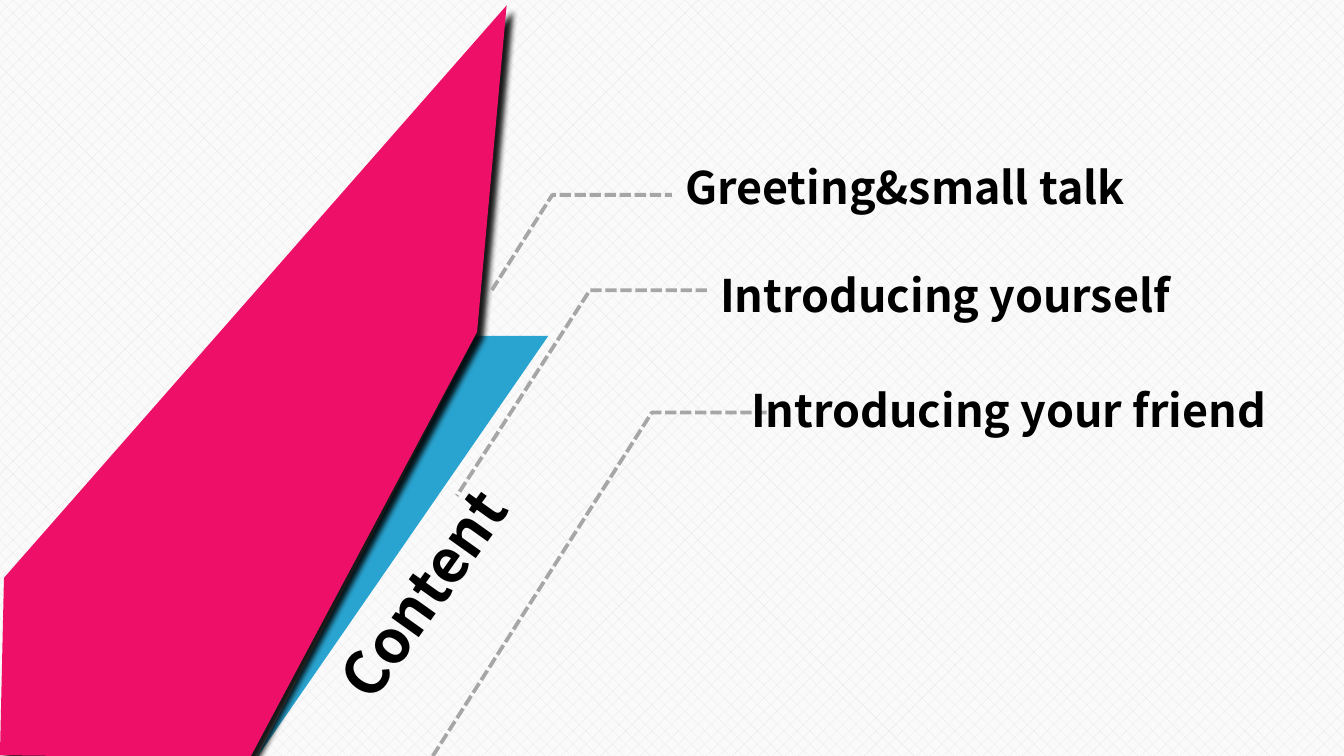
from dataclasses import dataclass

from lxml.etree import SubElement
from pptx import Presentation
from pptx.dml.color import RGBColor
from pptx.enum.dml import MSO_LINE, MSO_PATTERN
from pptx.enum.text import MSO_AUTO_SIZE, PP_ALIGN
from pptx.oxml.ns import qn
from pptx.shapes.autoshape import Shape
from pptx.slide import Slide
from pptx.util import Inches, Pt

FONT = "Noto Sans CJK SC"
Point = tuple[float, float]


@dataclass(frozen=True)
class Topic:
    """A heading and the dashed leader that points to it."""

    text: str
    left: float
    top: float
    width: float
    leader: tuple[Point, ...]


TOPICS = (
    Topic("Greeting&small talk", 5, 1.14, 3.93, ((3.66, 2.16), (4.11, 1.45), (5, 1.45))),
    Topic("Introducing yourself", 5.26, 1.94, 3.97, ((5.26, 2.16), (4.39, 2.16), (3.4, 3.69))),
    Topic("Introducing your friend", 5.49, 2.8, 4.41, ((3.16, 5.72), (4.85, 3.07), (5.74, 3.07))),
)
BLUE_FOLD = ((4.08, 2.5), (1.91, 5.64), (3.54, 2.5))
PINK_RIBBON = ((0, 5.62), (1.86, 5.64), (3.55, 2.47), (3.77, 0.04), (0.03, 4.3))


def color(value: str) -> RGBColor:
    """Turn a hex string into a colour."""
    return RGBColor.from_string(value)


def add_outline(slide: Slide, points: tuple[Point, ...], close: bool) -> Shape:
    """Draw a freeform through points given in inches."""
    corners = [(Inches(x), Inches(y)) for x, y in points]
    builder = slide.shapes.build_freeform(*corners[0])
    builder.add_line_segments(corners[1:], close=close)
    shape = builder.convert_to_shape()
    shape.shadow.inherit = False
    return shape


def add_panel(slide: Slide, points: tuple[Point, ...], fill: str) -> Shape:
    """Draw a closed filled panel without a border."""
    shape = add_outline(slide, points, close=True)
    shape.fill.solid()
    shape.fill.fore_color.rgb = color(fill)
    shape.line.fill.background()
    return shape


def add_leader(slide: Slide, points: tuple[Point, ...]) -> None:
    """Draw an open dashed grey leader."""
    shape = add_outline(slide, points, close=False)
    shape.fill.background()
    shape.line.color.rgb = color("A6A6A6")
    shape.line.width = Pt(2)
    shape.line.dash_style = MSO_LINE.SQUARE_DOT


def add_shadow(shape: Shape) -> None:
    """Give a shape a soft shadow to the lower right."""
    effects = shape.element.spPr.find(qn("a:effectLst"))
    shadow = SubElement(
        effects, qn("a:outerShdw"), blurRad=str(Pt(3)), dist=str(Pt(5)),
        dir=str(45 * 60000), algn="tl", rotWithShape="0",
    )
    shade = SubElement(shadow, qn("a:srgbClr"), val="000000")
    SubElement(shade, qn("a:alpha"), val="90000")


def add_text(
    slide: Slide, text: str, *, left: float, top: float, width: float, height: float = 0.53,
    size: float = 24, align: PP_ALIGN = PP_ALIGN.LEFT, rotation: float = 0,
) -> None:
    """Add a bold black text box."""
    shape = slide.shapes.add_textbox(Inches(left), Inches(top), Inches(width), Inches(height))
    shape.rotation = rotation
    frame = shape.text_frame
    frame.word_wrap = True
    frame.auto_size = MSO_AUTO_SIZE.SHAPE_TO_FIT_TEXT
    paragraph = frame.paragraphs[0]
    paragraph.alignment = align
    run = paragraph.add_run()
    run.text = text
    run.font.name = FONT
    run.font.size = Pt(size)
    run.font.bold = True
    run.font.color.rgb = color("000000")
    SubElement(run.font._element, qn("a:ea"), typeface=FONT)


def main() -> None:
    """Build and save the contents slide."""
    presentation = Presentation()
    presentation.slide_width = Inches(10)
    presentation.slide_height = Inches(10) * 9 // 16
    slide = presentation.slides.add_slide(presentation.slide_layouts[6])
    background = slide.background.fill
    background.patterned()
    background.pattern = MSO_PATTERN.PERCENT_30
    background.fore_color.rgb = color("E6E6E6")
    background.back_color.rgb = color("FAFAFA")

    add_panel(slide, BLUE_FOLD, "29A4D0")
    add_shadow(add_panel(slide, PINK_RIBBON, "EE0F68"))
    add_text(
        slide, "Content", left=1.98, top=4.09, width=2.35, height=0.67,
        size=32, align=PP_ALIGN.CENTER, rotation=305.5,
    )
    for topic in TOPICS:
        add_leader(slide, topic.leader)
    for topic in TOPICS:
        add_text(slide, topic.text, left=topic.left, top=topic.top, width=topic.width)
    presentation.save("out.pptx")


if __name__ == "__main__":
    main()
